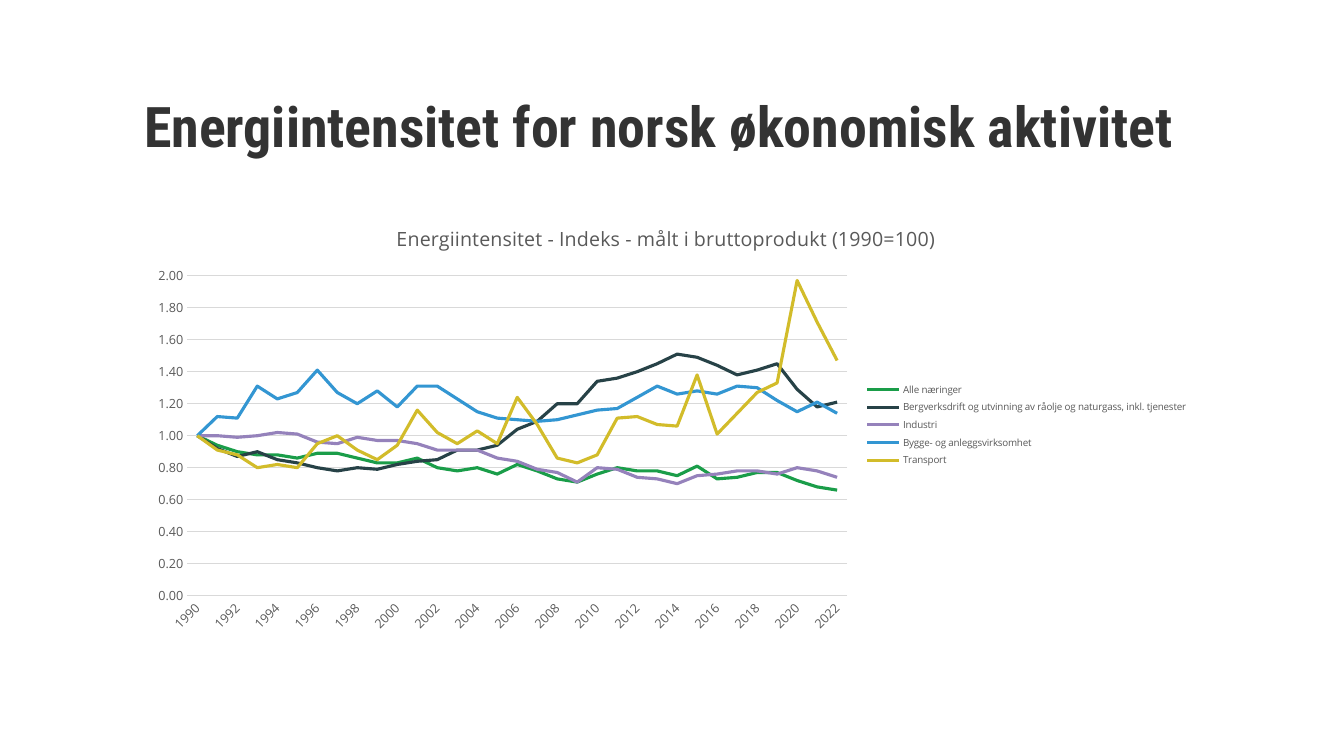
from lxml import etree
from pptx import Presentation
from pptx.chart.data import CategoryChartData
from pptx.dml.color import RGBColor
from pptx.enum.chart import XL_CHART_TYPE, XL_LEGEND_POSITION, XL_MARKER_STYLE, XL_TICK_MARK
from pptx.enum.text import MSO_ANCHOR, PP_ALIGN
from pptx.oxml.ns import qn
from pptx.util import Cm, Pt

LINE_CHART = XL_CHART_TYPE.LINE
LEGEND_RIGHT = XL_LEGEND_POSITION.RIGHT
NO_MARKER = XL_MARKER_STYLE.NONE
NO_TICK = XL_TICK_MARK.NONE
MIDDLE = MSO_ANCHOR.MIDDLE
LEFT = PP_ALIGN.LEFT

TITLE_FONT = "Roboto Condensed"
BODY_FONT = "Open Sans"
COLORS = {
    "background": "FFFFFF",
    "title": "333333",
    "label": "595959",
    "grid": "D9D9D9",
    "green": "1A9D49",
    "dark": "274247",
    "purple": "9582BB",
    "blue": "3396D2",
    "yellow": "D2BC2A",
}

YEARS = [str(year) for year in range(1990, 2023)]
# Series name, colour and one value for each year
SERIES = [
    ("Alle næringer", "green",
     [1, 0.94, 0.9, 0.88, 0.88, 0.86, 0.89, 0.89, 0.86, 0.83, 0.83,
      0.86, 0.8, 0.78, 0.8, 0.76, 0.82, 0.78, 0.73, 0.71, 0.76, 0.8,
      0.78, 0.78, 0.75, 0.81, 0.73, 0.74, 0.77, 0.77, 0.72, 0.68, 0.66]),
    ("Bergverksdrift og utvinning av råolje og naturgass, inkl. tjenester", "dark",
     [1, 0.92, 0.87, 0.9, 0.85, 0.83, 0.8, 0.78, 0.8, 0.79, 0.82,
      0.84, 0.85, 0.91, 0.91, 0.94, 1.04, 1.09, 1.2, 1.2, 1.34, 1.36,
      1.4, 1.45, 1.51, 1.49, 1.44, 1.38, 1.41, 1.45, 1.29, 1.18, 1.21]),
    ("Industri", "purple",
     [1, 1, 0.99, 1, 1.02, 1.01, 0.96, 0.95, 0.99, 0.97, 0.97,
      0.95, 0.91, 0.91, 0.91, 0.86, 0.84, 0.79, 0.77, 0.71, 0.8, 0.79,
      0.74, 0.73, 0.7, 0.75, 0.76, 0.78, 0.78, 0.76, 0.8, 0.78, 0.74]),
    ("Bygge- og anleggsvirksomhet", "blue",
     [1, 1.12, 1.11, 1.31, 1.23, 1.27, 1.41, 1.27, 1.2, 1.28, 1.18,
      1.31, 1.31, 1.23, 1.15, 1.11, 1.1, 1.09, 1.1, 1.13, 1.16, 1.17,
      1.24, 1.31, 1.26, 1.28, 1.26, 1.31, 1.3, 1.22, 1.15, 1.21, 1.14]),
    ("Transport", "yellow",
     [1, 0.91, 0.88, 0.8, 0.82, 0.8, 0.95, 1, 0.91, 0.85, 0.94,
      1.16, 1.02, 0.95, 1.03, 0.95, 1.24, 1.07, 0.86, 0.83, 0.88, 1.11,
      1.12, 1.07, 1.06, 1.38, 1.01, 1.14, 1.27, 1.33, 1.97, 1.71, 1.47]),
]


def rgb(name):
    return RGBColor.from_string(COLORS[name])


def format_font(font, size, color="label", name=BODY_FONT, bold=False):
    font.name, font.size, font.bold = name, Pt(size), bold
    font.color.rgb = rgb(color)


def write_text(text_frame, text, alignment=None, line_spacing=None, **font_format):
    paragraph = text_frame.paragraphs[0]
    run = paragraph.add_run()
    run.text = text
    paragraph.alignment = alignment
    paragraph.line_spacing = line_spacing
    format_font(run.font, **font_format)


def format_line(line, color, width):
    line.color.rgb = rgb(color)
    line.width = Pt(width)


def set_plot_layout(chart, **fractions):
    """Place the inner plot area as fractions of the chart's box."""
    plot_area = chart.element.find(".//" + qn("c:plotArea"))
    for old_layout in plot_area.findall(qn("c:layout")):
        plot_area.remove(old_layout)
    layout = etree.Element(qn("c:layout"))
    manual = etree.SubElement(layout, qn("c:manualLayout"))
    settings = {"layoutTarget": "inner", "xMode": "edge", "yMode": "edge", **fractions}
    for tag, value in settings.items():
        etree.SubElement(manual, qn("c:" + tag), val=str(value))
    plot_area.insert(0, layout)


def add_title(slide, left, top, width, height):
    title = slide.shapes.title
    title.left, title.top, title.width, title.height = left, top, width, height
    frame = title.text_frame
    frame.word_wrap = True
    frame.vertical_anchor = MIDDLE
    frame.margin_left = frame.margin_right = Cm(0.25)
    frame.margin_top, frame.margin_bottom = 0, Cm(0.13)
    write_text(frame, "Energiintensitet for norsk økonomisk aktivitet", alignment=LEFT,
               line_spacing=0.9, size=40, color="title", name=TITLE_FONT, bold=True)


def format_axes(chart):
    # Years: slanted, every second one
    years = chart.category_axis
    years.major_tick_mark = years.minor_tick_mark = NO_TICK
    format_font(years.tick_labels.font, 9)
    format_line(years.format.line, "grid", 0.75)
    axis_element = years._element
    axis_element.find(".//" + qn("a:bodyPr")).set("rot", "-2700000")
    label_step = etree.Element(qn("c:tickLblSkip"), val="2")
    axis_element.find(qn("c:noMultiLvlLbl")).addprevious(label_step)

    # Index values
    index = chart.value_axis
    index.major_tick_mark = index.minor_tick_mark = NO_TICK
    index.minimum_scale, index.maximum_scale, index.major_unit = 0, 2, 0.2
    format_font(index.tick_labels.font, 9)
    index.tick_labels.number_format = "0.00"
    index.tick_labels.number_format_is_linked = False
    index.format.line.fill.background()
    index.has_major_gridlines = True
    format_line(index.major_gridlines.format.line, "grid", 0.75)


def add_intensity_chart(slide, left, top, width, height):
    data = CategoryChartData(number_format="0.00")
    data.categories = YEARS
    for name, _, values in SERIES:
        data.add_series(name, values)
    chart = slide.shapes.add_chart(LINE_CHART, left, top, width, height, data).chart
    format_font(chart.font, 10)

    # Heading and legend
    chart.has_title = True
    write_text(chart.chart_title.text_frame,
               "Energiintensitet - Indeks - målt i bruttoprodukt (1990=100)", size=14)
    chart.chart_title.include_in_layout = False
    chart.has_legend = True
    chart.legend.position = LEGEND_RIGHT
    chart.legend.include_in_layout = False
    format_font(chart.legend.font, 7)

    # Plot, axes and lines
    set_plot_layout(chart, x=0.05, y=0.16, w=0.62, h=0.73)
    format_axes(chart)
    chart.plots[0].vary_by_categories = False
    for series, (_, color, _) in zip(chart.plots[0].series, SERIES):
        series.smooth = False
        series.marker.style = NO_MARKER
        format_line(series.format.line, color, 2.25)


def main():
    presentation = Presentation()
    presentation.slide_width, presentation.slide_height = Cm(33.87), Cm(19.05)
    slide = presentation.slides.add_slide(presentation.slide_layouts[5])
    slide.background.fill.solid()
    slide.background.fill.fore_color.rgb = rgb("background")

    left, width = Cm(3.38), Cm(26.82)
    add_title(slide, left, Cm(1.52), width, Cm(3.63))
    add_intensity_chart(slide, left, Cm(5.18), width, Cm(11.05))
    presentation.save("out.pptx")


if __name__ == "__main__":
    main()
